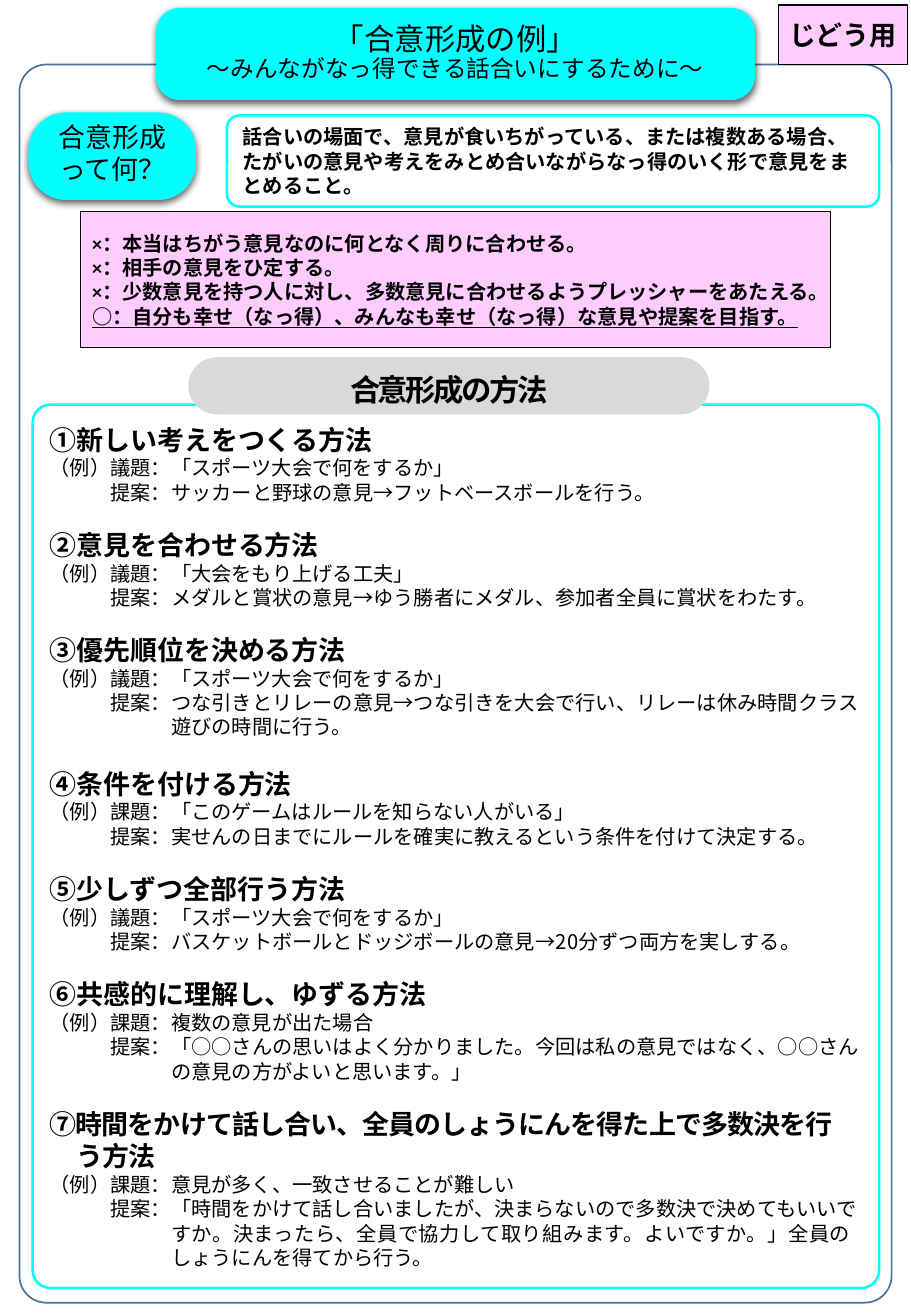
"""Build a one-page children's handout on ways of reaching consensus."""
from dataclasses import dataclass
from typing import Optional

import lxml.etree
import pptx
import pptx.dml.color
import pptx.enum.shapes
import pptx.enum.text
import pptx.oxml.ns
import pptx.util

Pt = pptx.util.Pt
SHAPE = pptx.enum.shapes.MSO_SHAPE
ALIGN = pptx.enum.text.PP_ALIGN
ANCHOR = pptx.enum.text.MSO_ANCHOR
qn = pptx.oxml.ns.qn


@dataclass(frozen=True)
class Theme:
    """Colours, fonts and type sizes of the handout."""
    black: str = "000000"
    white: str = "FFFFFF"
    cyan: str = "00FFFF"
    pink: str = "FFCCFF"
    grey: str = "D9D9D9"
    blue: str = "43739E"
    gothic: str = "Noto Sans CJK JP"
    latin: str = "Calibri"
    title: float = 18
    heading: float = 16
    subtitle: float = 14
    body: float = 12
    leading: float = 1.2


T = Theme()


@dataclass(frozen=True)
class Box:
    """A filled or outlined shape, measured in points."""
    left: float
    top: float
    width: float
    height: float
    fill: Optional[str] = None
    line: Optional[str] = None
    weight: float = 0.75
    corner: Optional[float] = None
    shadow: bool = False
    wrap: bool = True
    inset_top: float = 3.6


@dataclass(frozen=True)
class Method:
    """One way of reaching consensus, with its example."""
    heading: tuple[str, ...]
    topic: str
    proposal: tuple[str, ...]
    gap: float = T.body * T.leading
    heading_spacing: float = 0
    spacings: tuple[float, ...] = (0, 0, 0)


FRAME = Box(11.5, 38.2, 517, 733.7, line=T.blue, weight=1, corner=0.031)
METHODS_BOX = Box(19.4, 239.8, 501.8, 523.4, T.white, T.cyan, 1.5, 0.021)
TITLE = Box(92.9, 5, 354.2, 54, T.cyan, T.cyan, corner=0.256, shadow=True, wrap=False, inset_top=0)
QUESTION = Box(17.3, 67, 98.6, 51.1, T.cyan, T.cyan, corner=0.427, shadow=True, wrap=False)
ANSWER = Box(134.6, 68.4, 386.6, 54, T.white, T.cyan, 1.5, 0.139)
RULES = Box(47.5, 125.3, 445, 80.6, T.pink, T.black, wrap=False)
METHODS_LABEL = Box(111.6, 211.7, 308.9, 33.8, T.grey, corner=0.5)
AUDIENCE = Box(461.5, 2.9, 76.3, 35.3, T.pink, T.black, wrap=False)

RULE_LINES = (
    "×：本当はちがう意見なのに何となく周りに合わせる。",
    "×：相手の意見をひ定する。",
    "×：少数意見を持つ人に対し、多数意見に合わせるようプレッシャーをあたえる。",
    "○：自分も幸せ（なっ得）、みんなも幸せ（なっ得）な意見や提案を目指す。",
)

METHODS = (
    Method(("①新しい考えをつくる方法",), "議題：「スポーツ大会で何をするか」",
           ("サッカーと野球の意見→フットベースボールを行う。",), gap=0),
    Method(("②意見を合わせる方法",), "議題：「大会をもり上げる工夫」",
           ("メダルと賞状の意見→ゆう勝者にメダル、参加者全員に賞状をわたす。",)),
    Method(("③優先順位を決める方法",), "議題：「スポーツ大会で何をするか」",
           ("つな引きとリレーの意見→つな引きを大会で行い、リレーは休み時間クラス",
            "遊びの時間に行う。")),
    Method(("④条件を付ける方法",), "課題：「このゲームはルールを知らない人がいる」",
           ("実せんの日までにルールを確実に教えるという条件を付けて決定する。",),
           gap=T.subtitle * T.leading),
    Method(("⑤少しずつ全部行う方法",), "議題：「スポーツ大会で何をするか」",
           ("バスケットボールとドッジボールの意見→20分ずつ両方を実しする。",)),
    Method(("⑥共感的に理解し、ゆずる方法",), "課題：複数の意見が出た場合",
           ("「○○さんの思いはよく分かりました。今回は私の意見ではなく、○○さん",
            "の意見の方がよいと思います。」")),
    Method(("⑦時間をかけて話し合い、全員のしょうにんを得た上で多数決を行", "う方法"),
           "課題：意見が多く、一致させることが難しい",
           ("「時間をかけて話し合いましたが、決まらないので多数決で決めてもいいで",
            "すか。決まったら、全員で協力して取り組みます。よいですか。」全員の",
            "しょうにんを得てから行う。"),
           heading_spacing=-0.5, spacings=(0, 0.3, 0)),
)


def rgb(value: str) -> pptx.dml.color.RGBColor:
    """Turn a hex string into a colour."""
    return pptx.dml.color.RGBColor.from_string(value)


def add_shadow(sp) -> None:
    """Put a soft shadow below a shape."""
    effects = sp._element.spPr.find(qn("a:effectLst"))
    outer = lxml.etree.SubElement(effects, qn("a:outerShdw"), blurRad=str(Pt(4.5)),
                                  dist=str(Pt(1.5)), dir="5400000", rotWithShape="0")
    color = lxml.etree.SubElement(outer, qn("a:srgbClr"), val=T.black)
    lxml.etree.SubElement(color, qn("a:alpha"), val="63000")


def add_box(s, box: Box):
    """Draw a box and return its text frame."""
    kind = SHAPE.RECTANGLE if box.corner is None else SHAPE.ROUNDED_RECTANGLE
    sp = s.shapes.add_shape(kind, Pt(box.left), Pt(box.top), Pt(box.width), Pt(box.height))
    sp.shadow.inherit = False
    if box.corner is not None:
        sp.adjustments[0] = box.corner
    if box.fill:
        sp.fill.solid()
        sp.fill.fore_color.rgb = rgb(box.fill)
    else:
        sp.fill.background()
    if box.line:
        sp.line.color.rgb = rgb(box.line)
        sp.line.width = Pt(box.weight)
    else:
        sp.line.fill.background()
    if box.shadow:
        add_shadow(sp)
    tf = sp.text_frame
    tf.word_wrap = box.wrap
    tf.vertical_anchor = ANCHOR.MIDDLE
    tf.margin_top = Pt(box.inset_top)
    return tf


def add_text(tf, text: str, *, size: float = T.body, bold: bool = False,
             underline: bool = False, align=ALIGN.LEFT, font: str = T.gothic,
             leading: Optional[float] = None, spacing: float = 0,
             before: float = 0, indent: float = 0) -> None:
    """Add one formatted paragraph to a text frame."""
    p = tf.paragraphs[0]
    if p.runs:
        p = tf.add_paragraph()
    p.alignment = align
    p.line_spacing = Pt(leading or size * T.leading)
    p.space_before = Pt(before)
    if indent:
        p._p.get_or_add_pPr().set("marL", str(Pt(indent)))
    r = p.add_run()
    r.text = text
    r.font.size = Pt(size)
    r.font.bold = bold
    r.font.underline = underline
    r.font.name = font
    r.font.color.rgb = rgb(T.black)
    props = r._r.get_or_add_rPr()
    props.find(qn("a:latin")).addnext(props.makeelement(qn("a:ea"), {"typeface": T.gothic}))
    if spacing:
        props.set("spc", str(round(spacing * 100)))


def add_method(tf, method: Method) -> None:
    """Write a method's heading, topic and proposal."""
    for i, text in enumerate(method.heading):
        add_text(tf, text, size=T.heading, bold=True, spacing=method.heading_spacing,
                 before=0 if i else method.gap, indent=T.heading if i else 0)
    add_text(tf, "（例）" + method.topic)
    for i, (text, spacing) in enumerate(zip(method.proposal, method.spacings)):
        add_text(tf, text if i else "提案：" + text, spacing=spacing,
                 indent=T.body * (6 if i else 3))


def main() -> None:
    """Build and save the handout."""
    prs = pptx.Presentation()
    prs.slide_width, prs.slide_height = Pt(540), Pt(779.76)
    s = prs.slides.add_slide(prs.slide_layouts[6])
    add_box(s, FRAME)
    tf = add_box(s, METHODS_BOX)
    for method in METHODS:
        add_method(tf, method)
    tf = add_box(s, TITLE)
    add_text(tf, "「合意形成の例」", size=T.title, align=ALIGN.CENTER)
    add_text(tf, "～みんながなっ得できる話合いにするために～", size=T.subtitle,
             align=ALIGN.CENTER, leading=15)
    tf = add_box(s, QUESTION)
    add_text(tf, "合意形成", size=T.heading, align=ALIGN.CENTER, leading=15)
    add_text(tf, "って何？", size=T.heading, align=ALIGN.CENTER)
    add_text(add_box(s, ANSWER), "話合いの場面で、意見が食いちがっている、または複数ある場合、"
             "たがいの意見や考えをみとめ合いながらなっ得のいく形で意見をまとめること。", bold=True)
    tf = add_box(s, RULES)
    for text in RULE_LINES:
        add_text(tf, text, bold=True, font=T.latin, underline=text.startswith("○"))
    add_text(add_box(s, METHODS_LABEL), "合意形成の方法", size=T.title, bold=True,
             align=ALIGN.CENTER, leading=26, spacing=-1.5)
    add_text(add_box(s, AUDIENCE), "じどう用", size=T.heading, bold=True,
             align=ALIGN.CENTER, font=T.latin)
    prs.save("out.pptx")


if __name__ == "__main__":
    main()
